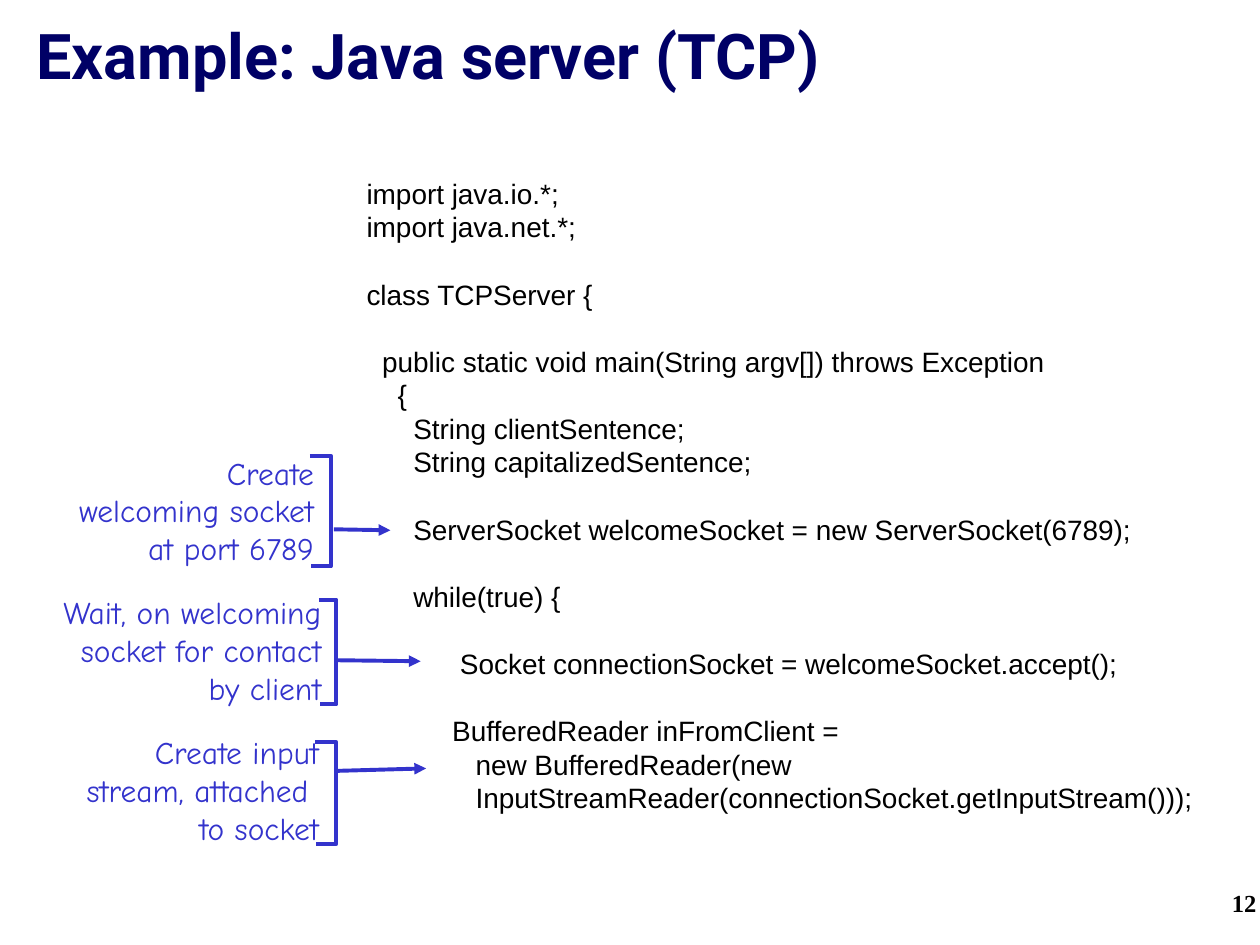
"""Build the slide that walks through a TCP server written in Java."""
from pptx import Presentation
from pptx import util as u
from pptx.dml.color import RGBColor
from pptx.enum import text
from pptx.oxml import parse_xml
from pptx.oxml.ns import nsdecls, qn

TITLE = "Example: Java server (TCP)"
NAVY, BLUE, BLACK = "000066", "3333CC", "000000"
SPACE = 4.45
LEADING = 1.2

# Each entry: indent in spaces, blank lines above, code.
CODE = [
    (0, 0, "import java.io.*;"),
    (0, 0, "import java.net.*;"),
    (0, 1, "class TCPServer {"),
    (2, 1, "public static void main(String argv[]) throws Exception"),
    (4, 0, "{"),
    (6, 0, "String clientSentence;"),
    (6, 0, "String capitalizedSentence;"),
    (6, 1, "ServerSocket welcomeSocket = new ServerSocket(6789);"),
    (6, 1, "while(true) {"),
    (12, 1, "Socket connectionSocket = welcomeSocket.accept();"),
    (11, 1, "BufferedReader inFromClient ="),
    (14, 0, "new BufferedReader(new"),
    (14, 0, "InputStreamReader(connectionSocket.getInputStream()));"),
]

NOTES = [
    {"lines": ["Create", "welcoming socket", "at port 6789"], "right": 6.58,
     "bracket": (6.25, 9.19, 6.67, 11.42), "arrow": (6.73, 10.67, 7.87, 10.69)},
    {"lines": ["Wait, on welcoming", "socket for contact", "by client"], "right": 6.73,
     "bracket": (6.43, 12.09, 6.78, 14.2), "arrow": (6.81, 13.31, 8.48, 13.33)},
    {"lines": ["Create input", "stream, attached ", "to socket"], "right": 6.68,
     "bracket": (6.35, 14.96, 6.78, 17.02), "arrow": (6.78, 15.54, 8.59, 15.49)},
]
NOTE_TOP, NOTE_STEP, NOTE_WIDTH, NOTE_HEIGHT = 9.02, 2.82, 6.1, 2.54


def color(value):
    return RGBColor.from_string(value)


def style(p, name, size, value, bold=False, align=text.PP_ALIGN.LEFT):
    p.alignment = align
    p.font.name, p.font.size, p.font.bold = name, u.Pt(size), bold
    p.font.color.rgb = color(value)


def add_text(s, box, lines, name, size, value, **options):
    tf = s.shapes.add_textbox(*map(u.Cm, box)).text_frame
    tf.word_wrap = True
    tf.text = "\n".join(lines)
    for p in tf.paragraphs:
        style(p, name, size, value, **options)
        p.line_spacing = u.Pt(size * LEADING)
    return tf


def stroke(sp):
    sp.line.color.rgb = color(BLUE)
    sp.line.width = u.Pt(2.25)


def add_bracket(s, left, top, right, bottom):
    points = [(u.Cm(x), u.Cm(y)) for x, y in
              [(left, top), (right, top), (right, bottom), (left + 0.03, bottom)]]
    builder = s.shapes.build_freeform(*points[0])
    builder.add_line_segments(points[1:], close=False)
    sp = builder.convert_to_shape()
    sp.fill.background()
    sp.shadow.inherit = False
    stroke(sp)


def add_arrow(s, *ends):
    sp = s.shapes.add_connector(1, *map(u.Cm, ends))
    stroke(sp)
    props = sp._element.spPr
    props.find(qn("a:ln")).append(parse_xml(f'<a:tailEnd {nsdecls("a")} type="triangle"/>'))
    props.append(parse_xml(f'<a:effectLst {nsdecls("a")}/>'))


def main():
    prs = Presentation()
    prs.slide_width, prs.slide_height = u.Cm(25.4), u.Cm(19.05)
    s = prs.slides.add_slide(prs.slide_layouts[5])

    title = s.shapes.title
    title.left, title.top, title.width, title.height = map(u.Cm, (0.48, 0.2, 24.66, 2.54))
    title.text_frame.text = TITLE
    title.text_frame.vertical_anchor = text.MSO_ANCHOR.TOP
    style(title.text_frame.paragraphs[0], "Roboto", 36, NAVY, bold=True)

    right = text.PP_ALIGN.RIGHT
    add_text(s, (17.53, 17.78, 8.05, 1.27), ["12"], "Times New Roman", 14, BLACK,
             bold=True, align=right)

    tf = add_text(s, (7.14, 3.43, 17.4, 14.53), [line for *_, line in CODE], "Arial", 16, BLACK)
    for p, (indent, blank, _) in zip(tf.paragraphs, CODE):
        p.space_before = u.Pt(blank * 16 * LEADING)
        p._p.get_or_add_pPr().set("marL", str(u.Pt(indent * SPACE)))

    for i, note in enumerate(NOTES):
        box = (note["right"] - NOTE_WIDTH, NOTE_TOP + i * NOTE_STEP, NOTE_WIDTH, NOTE_HEIGHT)
        add_text(s, box, note["lines"], "Comic Neue", 18, BLUE, align=right)
        add_bracket(s, *note["bracket"])
        add_arrow(s, *note["arrow"])

    prs.save("out.pptx")


if __name__ == "__main__":
    main()
